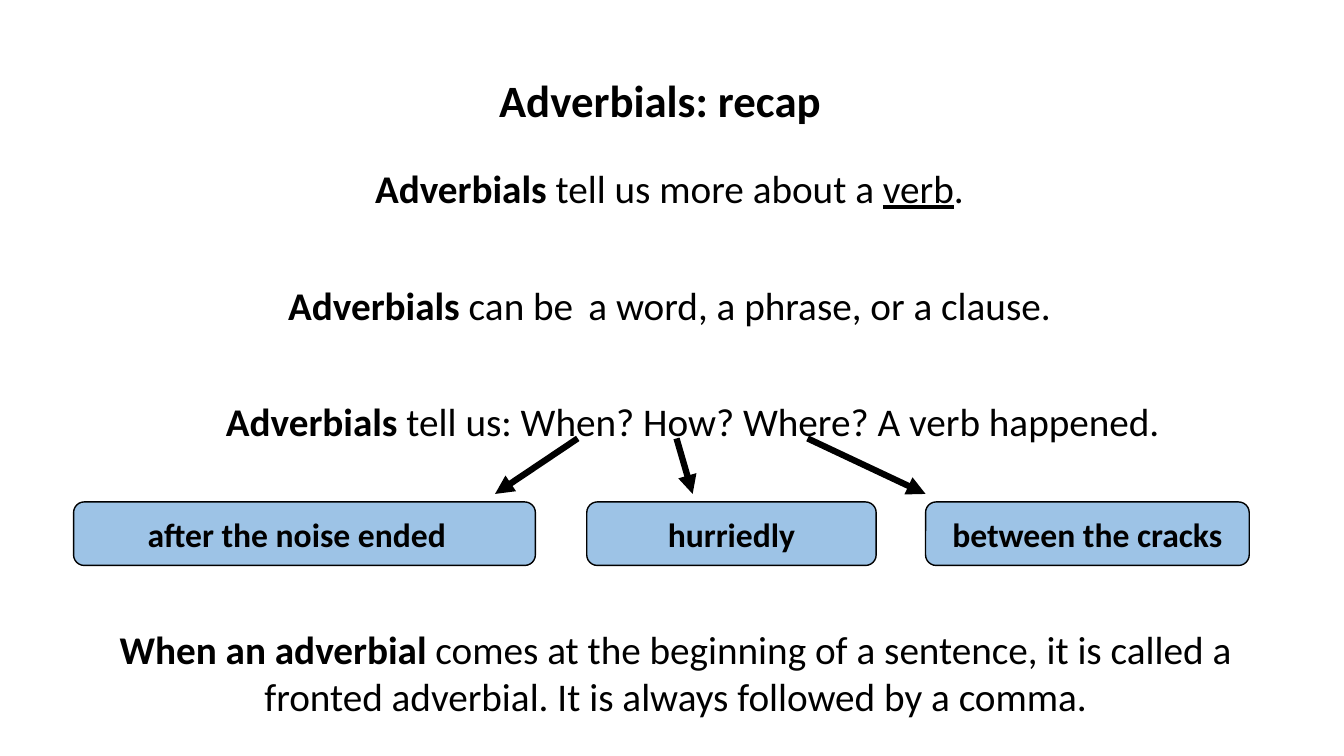
from lxml import etree
from pptx import Presentation
from pptx.dml.color import RGBColor
from pptx.enum.shapes import MSO_CONNECTOR, MSO_SHAPE
from pptx.enum.text import MSO_ANCHOR, MSO_AUTO_SIZE, PP_ALIGN
from pptx.oxml.ns import qn
from pptx.util import Inches, Pt

STRAIGHT = MSO_CONNECTOR.STRAIGHT
ROUNDED = MSO_SHAPE.ROUNDED_RECTANGLE
TOP, MIDDLE = MSO_ANCHOR.TOP, MSO_ANCHOR.MIDDLE
LEFT, CENTER = PP_ALIGN.LEFT, PP_ALIGN.CENTER
NO_FIT = MSO_AUTO_SIZE.NONE

FONT = "Calibri"
COLORS = {"ink": "000000", "example": "9DC3E6"}
STATEMENT_WIDTH = 11.56
EXAMPLE_TOP, EXAMPLE_HEIGHT = 4.98, 0.63
ARROW_TOP, ARROW_BOTTOM = 4.35, 4.9

# left, top, height, runs of (text, format)
STATEMENTS = [
    (0.86, 1.58, 0.57, [("Adverbials", {"bold": True}), (" tell us more about a ", {}),
                        ("verb", {"underline": True}), (".", {})]),
    (0.86, 2.46, 0.91, [("Adverbials", {"bold": True}), (" can be", {}), (" ", {"size": 48}),
                        ("a word, a phrase, or a clause.", {})]),
    (1.09, 3.89, 0.57, [("Adverbials", {"bold": True}),
                        (" tell us: When? How? Where? A verb happened.", {})]),
    (0.92, 6.15, 1.04, [("When an adverbial", {"bold": True}),
                        (" comes at the beginning of a sentence, it is called a fronted "
                         "adverbial. It is always followed by a comma.", {})]),
]
# text, left, width, right inset, arrow start x, arrow end x
EXAMPLES = [
    ("after the noise ended", 0.73, 4.58, 0.25, 5.73, 4.91),
    ("hurriedly", 5.82, 2.87, 0.1, 6.71, 6.87),
    ("between the cracks", 9.18, 3.21, 0.1, 8.01, 9.18),
]


def color(name):
    return RGBColor.from_string(COLORS[name])


def add_run(p, text, size=28, bold=False, underline=False):
    r = p.add_run()
    r.text = text
    r.font.name = FONT
    r.font.size = Pt(size)
    r.font.bold = bold
    r.font.underline = underline
    r.font.color.rgb = color("ink")


def write(sp, runs, align=CENTER, anchor=TOP, wrap=True):
    """Fill a shape with one paragraph of formatted runs."""
    tf = sp.text_frame
    tf.word_wrap = wrap
    tf.auto_size = NO_FIT
    tf.vertical_anchor = anchor
    p = tf.paragraphs[0]
    p.alignment = align
    for text, fmt in runs:
        add_run(p, text, **fmt)


def add_title(s, text):
    sp = s.shapes.title
    sp.left, sp.top = Inches(4.85), Inches(0.67)
    sp.width, sp.height = Inches(3.42), Inches(0.64)
    write(sp, [(text, {"size": 32, "bold": True})], align=LEFT, wrap=False)


def add_statement(s, left, top, height, runs):
    sp = s.shapes.add_textbox(Inches(left), Inches(top), Inches(STATEMENT_WIDTH), Inches(height))
    write(sp, runs)


def add_example(s, text, left, width, right_inset):
    sp = s.shapes.add_shape(ROUNDED, Inches(left), Inches(EXAMPLE_TOP),
                            Inches(width), Inches(EXAMPLE_HEIGHT))
    sp.shadow.inherit = False
    sp.fill.solid()
    sp.fill.fore_color.rgb = color("example")
    sp.line.color.rgb = color("ink")
    sp.line.width = Pt(1)
    sp.text_frame.margin_right = Inches(right_inset)
    write(sp, [(text, {"size": 24, "bold": True})], anchor=MIDDLE)


def add_arrow(s, start_x, end_x):
    arrow = s.shapes.add_connector(STRAIGHT, Inches(start_x), Inches(ARROW_TOP),
                                   Inches(end_x), Inches(ARROW_BOTTOM))
    arrow.line.color.rgb = color("ink")
    arrow.line.width = Pt(4.5)
    etree.SubElement(arrow.line._get_or_add_ln(), qn("a:tailEnd"), type="triangle")
    etree.SubElement(arrow._element.spPr, qn("a:effectLst"))


def main():
    prs = Presentation()
    prs.slide_width, prs.slide_height = Inches(13.33), Inches(7.5)
    s = prs.slides.add_slide(prs.slide_layouts[5])
    add_title(s, "Adverbials: recap")
    for statement in STATEMENTS:
        add_statement(s, *statement)
    for text, left, width, right_inset, start_x, end_x in EXAMPLES:
        add_example(s, text, left, width, right_inset)
        add_arrow(s, start_x, end_x)
    prs.save("out.pptx")


if __name__ == "__main__":
    main()
